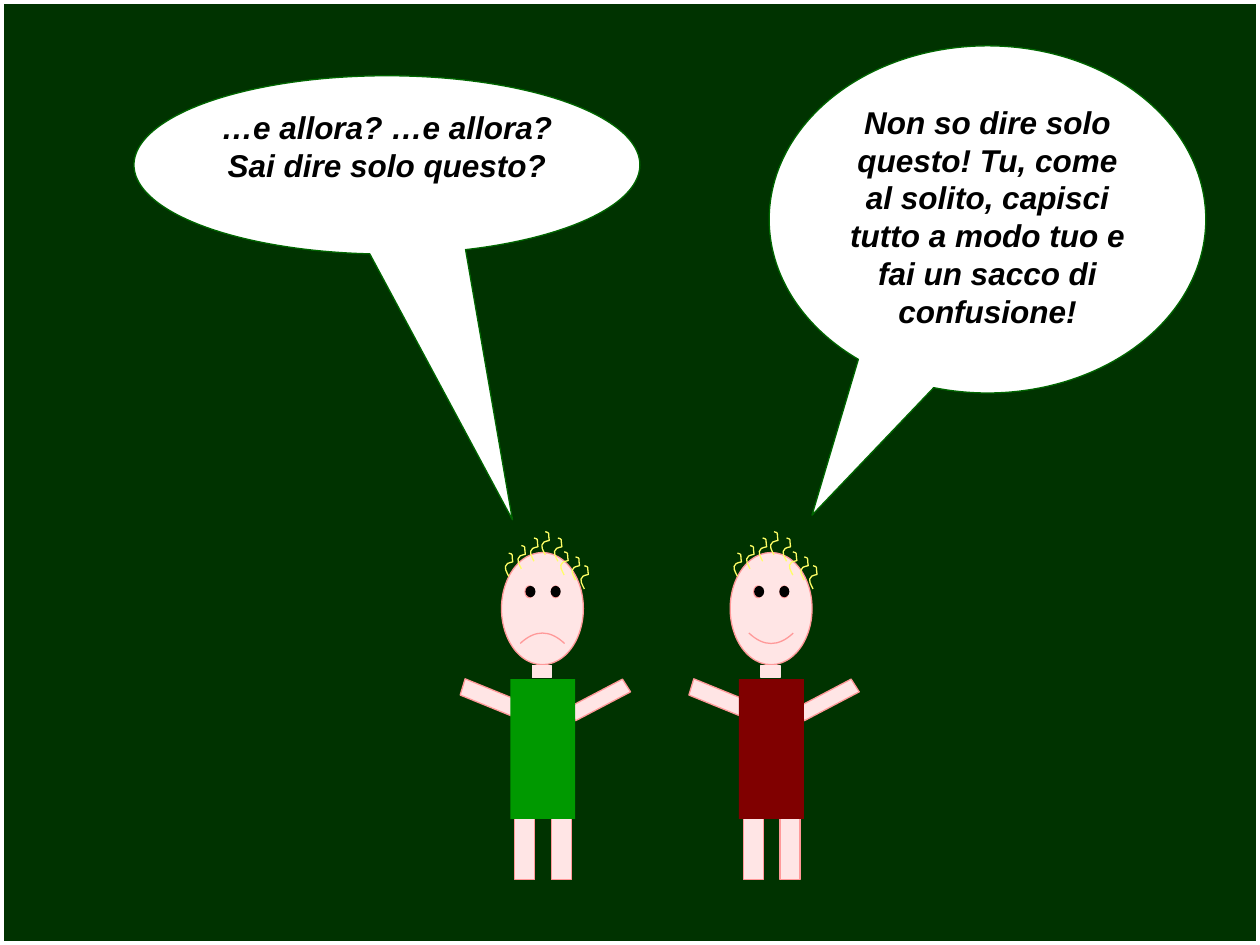
from lxml import etree
from pptx import Presentation, util as u
from pptx.dml.color import RGBColor
from pptx.enum import shapes, text
from pptx.oxml.ns import qn

Kind = shapes.MSO_SHAPE
SKIN, BLUSH, HAIR = "FFE5E5", "FF9999", "FFFF66"
COLUMNS, ROWS = 100, 75

# One curl of hair, measured from its top left: a start point, then three
# cubic curves of two control points and an end point each
CURL = [(0.48, 1.85),
        (0.35, 1.55), (0, 1.1), (0.38, 0.83),
        (0.5, 0.75), (0.65, 0.75), (0.8, 0.7),
        (0.68, 0), (0.88, 0.13), (0.48, 0)]
CURL_PLACES = [(-0.6, 43.9), (0.4, 43.3), (3.3, 42.7), (3.8, 43.8),
               (2.3, 42.2), (5.4, 44.9), (4.7, 44.2), (1.4, 42.7)]


def color(value):
    return RGBColor.from_string(value)


def bend(shape):
    """Turn each three straight segments of a freeform into one cubic curve."""
    segments = shape._element.xpath(".//a:path/a:lnTo")
    for index in range(0, len(segments), 3):
        trio = segments[index:index + 3]
        outline = trio[0].getparent()
        curve = etree.SubElement(outline, qn("a:cubicBezTo"))
        for segment in trio:
            curve.append(segment[0])
            outline.remove(segment)


class Comic:
    """Draws on one page; lengths are columns and rows of the page grid."""

    def __init__(self, deck, background):
        self.column = deck.slide_width / COLUMNS
        self.row = deck.slide_height / ROWS
        self.page = deck.slides.add_slide(deck.slide_layouts[6])
        self.page.background.fill.solid()
        self.page.background.fill.fore_color.rgb = color(background)

    def grid(self, x, y):
        return round(x * self.column), round(y * self.row)

    def paint(self, shape, fill=None, line=None, width=0.75):
        shape.shadow.inherit = False
        if fill:
            shape.fill.solid()
            shape.fill.fore_color.rgb = color(fill)
        else:
            shape.fill.background()
        if line:
            shape.line.color.rgb = color(line)
            shape.line.width = u.Pt(width)
        else:
            shape.line.fill.background()
        return shape

    def shape(self, kind, at, fill=None, line=None, width=0.75, adjust=(),
              turn=0, parent=None):
        left, top, wide, high = at
        shape = (parent or self.page).shapes.add_shape(
            kind, *self.grid(left, top), *self.grid(wide, high))
        for index, value in enumerate(adjust):
            shape.adjustments[index] = value
        shape.rotation = turn
        return self.paint(shape, fill, line, width)

    def curl(self, left, top, parent):
        start, *others = [self.grid(left + x, top + y) for x, y in CURL]
        builder = parent.shapes.build_freeform(*start)
        builder.add_line_segments(others, close=False)
        shape = builder.convert_to_shape()
        bend(shape)
        self.paint(shape, line=HAIR)

    def person(self, left, shirt, smile):
        """Draw a figure whose shirt starts at the given column."""
        group = self.page.shapes.add_group_shape()

        def part(kind, x, y, wide, high, fill=SKIN, line=BLUSH, **style):
            self.shape(kind, (left + x, y, wide, high), fill, line,
                       parent=group, **style)

        part(Kind.PARALLELOGRAM, 6.25, 53.1, 1.6, 4.9, adjust=[0.25], turn=57.6)
        part(Kind.PARALLELOGRAM, -2.4, 53, 1.8, 4.9, adjust=[0.25], turn=106.9)
        for leg in (0.35, 3.25):
            part(Kind.RECTANGLE, leg, 64, 1.6, 5.8)
        part(Kind.SMILEY_FACE, -0.7, 43.85, 6.5, 8.9, adjust=[smile])
        for eye in (3.2, 1.2):
            part(Kind.OVAL, eye, 46.5, 0.8, 0.9, "000000", None)
        part(Kind.RECTANGLE, 1.75, 52.8, 1.5, 1, line=SKIN)
        part(Kind.RECTANGLE, 0, 53.9, 5.15, 11.1, shirt, None)
        for x, y in CURL_PLACES:
            self.curl(left + x, y, group)

    def balloon(self, at, tip, lines):
        shape = self.shape(Kind.OVAL_CALLOUT, at, "FFFFFF", "006600", adjust=tip)
        frame = shape.text_frame
        frame.word_wrap = True
        frame.vertical_anchor = text.MSO_ANCHOR.TOP
        frame.text = "\n".join(lines)
        for para in frame.paragraphs:
            para.alignment = text.PP_ALIGN.CENTER
            for span in para.runs:
                span.font.name, span.font.size = "Arial", u.Pt(18)
                span.font.bold = span.font.italic = True
                span.font.color.rgb = color("000000")


def main():
    deck = Presentation()
    deck.slide_width, deck.slide_height = u.Inches(10), u.Inches(7.5)
    comic = Comic(deck, "003300")
    comic.shape(Kind.RECTANGLE, (0, 0, COLUMNS, ROWS), line="FFFFFF", width=4.5)
    comic.person(40.5, "009900", smile=-0.047)
    comic.person(58.65, "800000", smile=0.047)
    comic.balloon((61.05, 3.64, 34.65, 27.55), (-0.402, 0.852), [
        "Non so dire solo questo! Tu, come al solito, capisci tutto a modo tuo "
        "e fai un sacco di confusione!"])
    comic.balloon((10.64, 6.02, 40.15, 14.15), (0.248, 1.99),
                  ["…e allora? …e allora?", "Sai dire solo questo?"])
    deck.save("out.pptx")


if __name__ == "__main__":
    main()
